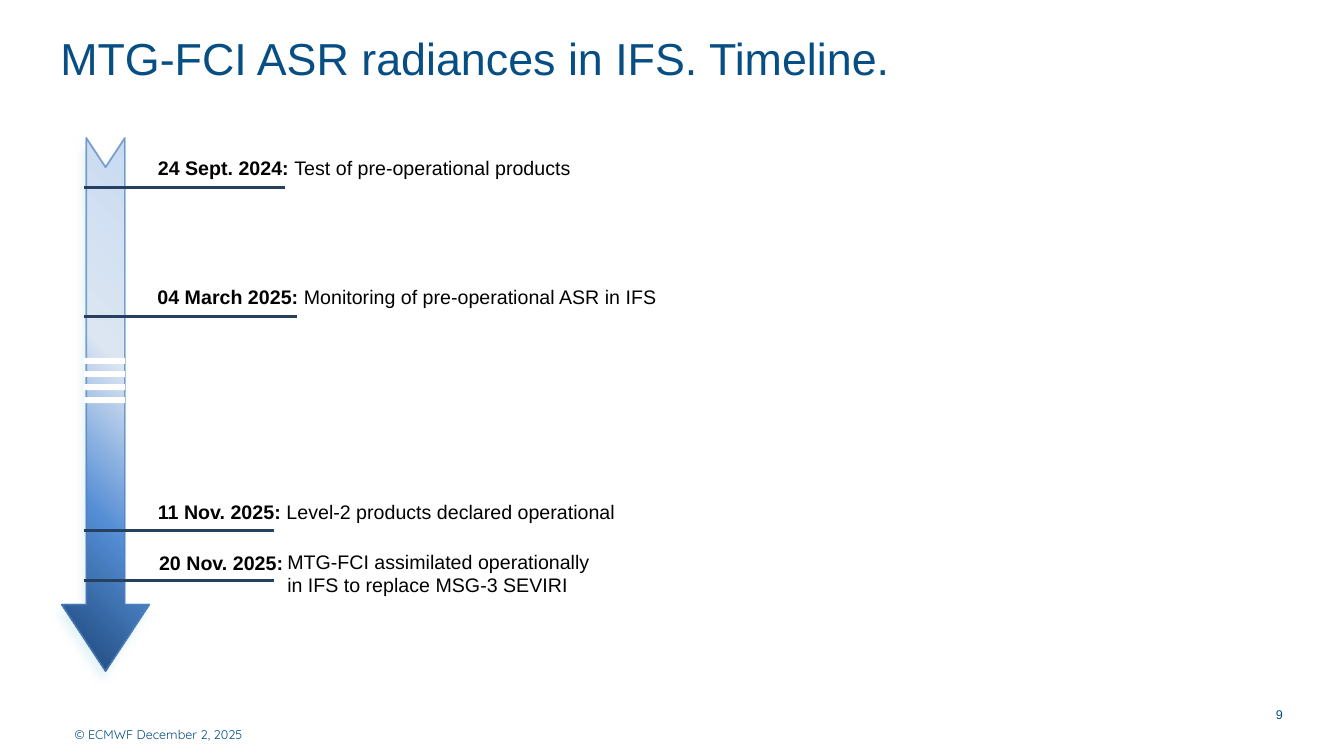
from lxml import etree
from pptx import Presentation
from pptx import util as u
from pptx.dml.color import RGBColor
from pptx.enum import shapes, text
from pptx.oxml import parse_xml
from pptx.oxml.ns import nsdecls, qn

Cm = u.Cm
COLORS = {"navy": "064E83", "rule": "254061", "edge": "4F81BD",
          "black": "000000", "white": "FFFFFF", "glow": "DBEEF4"}
GRADIENT = [(0, "C6D9F1"), (41, "DCE6F2"), (69, "558ED5"), (97, "1F497D")]

deck = Presentation()
deck.slide_width, deck.slide_height = Cm(33.87), Cm(19.05)
page = deck.slides.add_slide(deck.slide_layouts[6])


def rgb(name):
    return RGBColor.from_string(COLORS[name])


def add_text(place, parts, size, color, font="Arial", inset=None,
             anchor=text.MSO_ANCHOR.TOP):
    """Add a one-paragraph box; parts is a list of (words, bold)."""
    box = page.shapes.add_textbox(*map(Cm, place))
    frame = box.text_frame
    frame.word_wrap = True
    frame.vertical_anchor = anchor
    if inset is not None:
        frame.margin_left = frame.margin_right = Cm(inset)
        frame.margin_top = frame.margin_bottom = Cm(inset)
    para = frame.paragraphs[0]
    for words, bold in parts:
        span = para.add_run()
        span.text = words
        span.font.name, span.font.size = font, u.Pt(size)
        span.font.bold = bold
        span.font.color.rgb = rgb(color)
    return para


# Footer, title and page number
add_text((1.88, 18.06, 5.44, 0.64), [("© ECMWF December 2, 2025", False)],
         9, "navy", "Quicksand", 0, text.MSO_ANCHOR.BOTTOM)
title = add_text((1.52, 1.14, 29.36, 1.98),
                 [("MTG-FCI ASR radiances in IFS. Timeline.", False)],
                 32, "navy", inset=0)
title.line_spacing = u.Pt(28)
number = add_text((27.86, 17.55, 4.47, 0.64), [("9", False)],
                  9, "navy", inset=0, anchor=text.MSO_ANCHOR.BOTTOM)
number.alignment = text.PP_ALIGN.RIGHT

# Timeline arrow, turned to point down
arrow = page.shapes.add_shape(shapes.MSO_SHAPE.NOTCHED_RIGHT_ARROW,
                              Cm(-4.06), Cm(9.09), Cm(13.44), Cm(2.21))
arrow.rotation = 90
arrow.adjustments[0], arrow.adjustments[1] = 0.44, 0.76
arrow.line.color.rgb = rgb("edge")
arrow.line.width = u.Pt(1.25)
edge = arrow.line.fill._xPr.find(".//" + qn("a:srgbClr"))
etree.SubElement(edge, qn("a:alpha")).set("val", "70000")
arrow.fill.gradient()
gradient = arrow._element.spPr.find(qn("a:gradFill"))
stops = "".join(f'<a:gs pos="{pos * 1000}"><a:srgbClr val="{color}"/></a:gs>'
                for pos, color in GRADIENT)
gradient.getparent().replace(gradient, parse_xml(
    f'<a:gradFill {nsdecls("a")} rotWithShape="1"><a:gsLst>{stops}</a:gsLst>'
    '<a:lin ang="2700000" scaled="0"/></a:gradFill>'))
arrow._element.spPr.append(parse_xml(
    f'<a:effectLst {nsdecls("a")}><a:outerShdw blurRad="{u.Pt(6)}" '
    f'dist="{u.Pt(6)}" dir="7200000" rotWithShape="0">'
    f'<a:srgbClr val="{COLORS["glow"]}"><a:alpha val="68000"/></a:srgbClr>'
    '</a:outerShdw></a:effectLst>'))

# Break in the time scale
for i in range(4):
    gap = page.shapes.add_shape(shapes.MSO_SHAPE.RECTANGLE, Cm(2.11),
                                Cm(9.02 + 0.33 * i), Cm(1.04), Cm(0.15))
    gap.shadow.inherit = False
    gap.fill.solid()
    gap.fill.fore_color.rgb = rgb("white")
    gap.line.fill.background()

# Milestones: rule height, rule end, label left, label top, date, event
milestones = [
    (4.72, 7.19, 3.73, 3.81, "24 Sept. 2024: ", "Test of pre-operational products"),
    (7.98, 7.49, 3.72, 7.06, "04 March 2025: ", "Monitoring of pre-operational ASR in IFS"),
    (13.36, 6.91, 3.73, 12.47, "11 Nov. 2025: ", "Level-2 products declared operational"),
    (14.63, 6.91, 3.76, 13.77, "20 Nov. 2025:", None),
]
for height, end, left, top, date, event in milestones:
    rule = page.shapes.add_connector(shapes.MSO_CONNECTOR.STRAIGHT, Cm(2.11),
                                     Cm(height), Cm(end), Cm(height))
    rule.line.color.rgb = rgb("rule")
    rule.line.width = u.Pt(2)
    etree.SubElement(rule._element.spPr, qn("a:effectLst"))
    parts = [(date, True)] + ([(event, False)] if event else [])
    add_text((left, top, 17.3 if event else 11.18, 0.86), parts, 14, "black")

add_text((6.99, 13.72, 8.15, 1.45),
         [("MTG-FCI assimilated operationally in IFS to replace MSG-3 SEVIRI", False)],
         14, "black")

deck.save("out.pptx")
